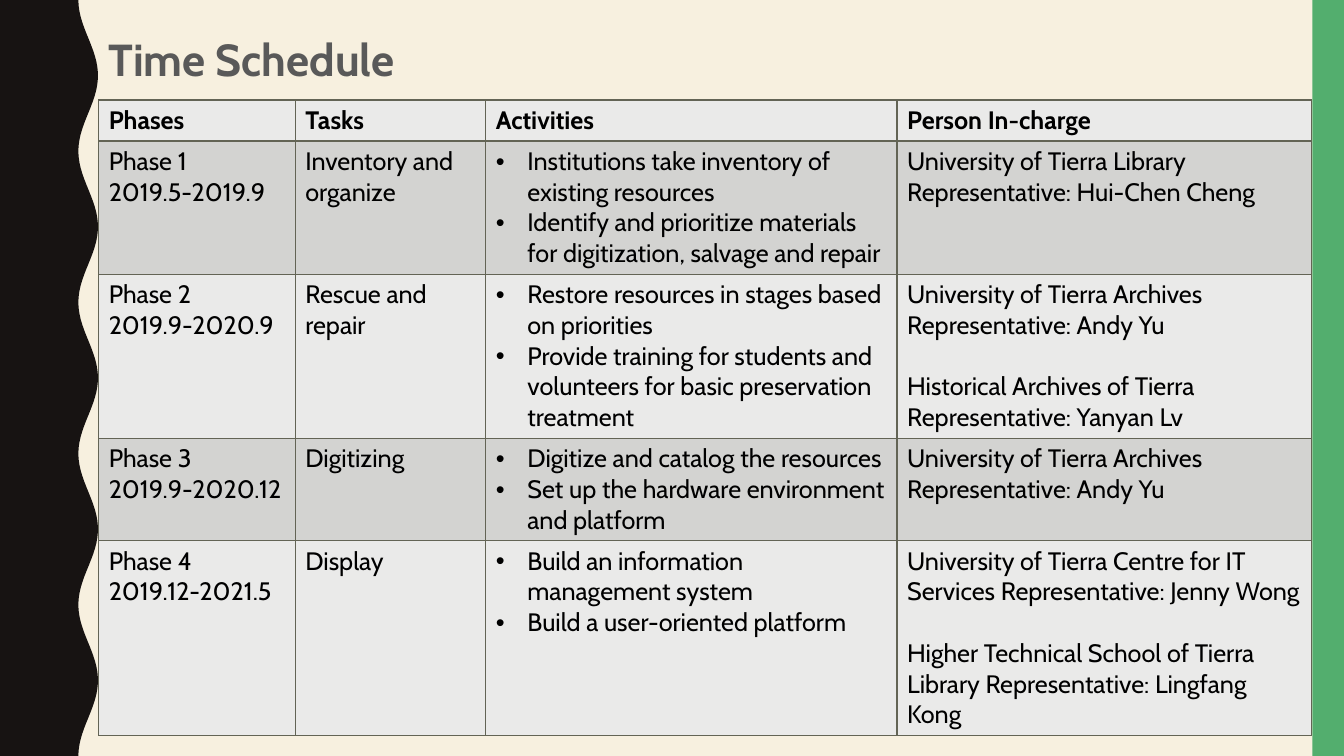
from dataclasses import dataclass
from math import cos, pi

from lxml.etree import SubElement
from pptx import Presentation
from pptx.dml.color import RGBColor
from pptx.enum.shapes import MSO_SHAPE
from pptx.enum.text import MSO_ANCHOR, PP_ALIGN
from pptx.oxml.ns import qn
from pptx.util import Pt


@dataclass(frozen=True)
class Theme:
    font: str = "Cabin"
    title_size: int = 32
    body_size: int = 18
    line_height: int = 22
    cell_padding: float = 7.2
    bullet_indent: float = 22.5
    border_width: int = 1
    background: str = "F7F0DF"
    wave: str = "171312"
    stripe: str = "53AE6E"
    title: str = "595959"
    text: str = "000000"
    border: str = "636455"
    bands: tuple = ("EAEAE9", "D3D3D1")


WIDTH, HEIGHT = 960, 540
COLUMN_WIDTHS = (140.4, 136.1, 293.8, 295.9)
ROW_LINES = (1, 4, 5, 3, 6)
ACTIVITIES_COLUMN, PERSON_COLUMN = 2, 3
SCHEDULE = (
    (["Phases"], ["Tasks"], ["Activities"], ["Person In-charge"]),
    (
        ["Phase 1", "2019.5-2019.9"],
        ["Inventory and organize"],
        ["Institutions take inventory of existing resources",
         "Identify and prioritize materials for digitization, salvage and repair"],
        ["University of Tierra Library Representative: Hui-Chen Cheng"],
    ),
    (
        ["Phase 2", "2019.9-2020.9"],
        ["Rescue and repair"],
        ["Restore resources in stages based on priorities",
         "Provide training for students and volunteers for basic preservation treatment"],
        ["University of Tierra Archives Representative: Andy Yu",
         "Historical Archives of Tierra Representative: Yanyan Lv"],
    ),
    (
        ["Phase 3", "2019.9-2020.12"],
        ["Digitizing"],
        ["Digitize and catalog the resources",
         "Set up the hardware environment and platform"],
        ["University of Tierra Archives Representative: Andy Yu"],
    ),
    (
        ["Phase 4", "2019.12-2021.5"],
        ["Display"],
        ["Build an information management system",
         "Build a user-oriented platform"],
        ["University of Tierra Centre for IT Services Representative: Jenny Wong",
         "Higher Technical School of Tierra Library Representative: Lingfang Kong"],
    ),
)


class SlideBuilder:
    """Draws themed elements on one slide, with lengths in points."""

    def __init__(self, slide, theme):
        self.slide = slide
        self.theme = theme

    def background(self):
        fill = self.slide.background.fill
        fill.solid()
        fill.fore_color.rgb = RGBColor.from_string(self.theme.background)

    def paint(self, shape, color):
        shape.shadow.inherit = False
        shape.fill.solid()
        shape.fill.fore_color.rgb = RGBColor.from_string(color)
        shape.line.fill.background()

    def wave(self, middle, amplitude, period, step):
        edge = [
            (Pt(middle - amplitude * cos(2 * pi * y / period)), Pt(y))
            for y in range(0, HEIGHT + step, step)
        ]
        builder = self.slide.shapes.build_freeform(0, 0)
        builder.add_line_segments(edge + [(0, Pt(HEIGHT))], close=True)
        self.paint(builder.convert_to_shape(), self.theme.wave)

    def stripe(self, left):
        shape = self.slide.shapes.add_shape(
            MSO_SHAPE.RECTANGLE, Pt(left), 0, Pt(WIDTH - left), Pt(HEIGHT))
        self.paint(shape, self.theme.stripe)

    def format_text(self, paragraph, size, color, bold):
        paragraph.alignment = PP_ALIGN.LEFT
        for run in paragraph.runs:
            run.font.name = self.theme.font
            run.font.size = Pt(size)
            run.font.bold = bold
            run.font.color.rgb = RGBColor.from_string(color)

    def title(self, text, left, top, width, height):
        box = self.slide.shapes.add_textbox(Pt(left), Pt(top), Pt(width), Pt(height))
        frame = box.text_frame
        frame.word_wrap = True
        frame.vertical_anchor = MSO_ANCHOR.TOP
        frame.text = text
        paragraph = frame.paragraphs[0]
        paragraph.line_spacing = 1.5
        paragraph.space_before = Pt(7)
        self.format_text(paragraph, self.theme.title_size, self.theme.title, True)

    def bullet(self, paragraph):
        properties = paragraph._p.get_or_add_pPr()
        indent = Pt(self.theme.bullet_indent)
        properties.set("marL", str(indent))
        properties.set("indent", str(-indent))
        SubElement(properties, qn("a:buFont"), typeface="Arial")
        SubElement(properties, qn("a:buChar"), char="•")

    def borders(self, cell):
        properties = cell._tc.get_or_add_tcPr()
        for side in ("L", "R", "T", "B"):
            line = SubElement(
                properties, qn(f"a:ln{side}"), w=str(Pt(self.theme.border_width)))
            fill = SubElement(line, qn("a:solidFill"))
            SubElement(fill, qn("a:srgbClr"), val=self.theme.border)

    def cell(self, cell, lines, row, column):
        self.borders(cell)
        cell.fill.solid()
        cell.fill.fore_color.rgb = RGBColor.from_string(self.theme.bands[row % 2])
        cell.text_frame.text = "\n".join(lines)
        for index, paragraph in enumerate(cell.text_frame.paragraphs):
            self.format_text(paragraph, self.theme.body_size, self.theme.text, row == 0)
            if index and column == PERSON_COLUMN:
                paragraph.space_before = Pt(self.theme.line_height)
            if row and column == ACTIVITIES_COLUMN:
                self.bullet(paragraph)

    def table(self, rows, left, top):
        heights = [
            self.theme.cell_padding + self.theme.line_height * lines
            for lines in ROW_LINES
        ]
        table = self.slide.shapes.add_table(
            len(rows), len(COLUMN_WIDTHS), Pt(left), Pt(top),
            Pt(sum(COLUMN_WIDTHS)), Pt(sum(heights))).table
        table.horz_banding = False
        for column, width in zip(table.columns, COLUMN_WIDTHS):
            column.width = Pt(width)
        for row, (cells, height) in enumerate(zip(rows, heights)):
            table.rows[row].height = Pt(height)
            for column, lines in enumerate(cells):
                self.cell(table.cell(row, column), lines, row, column)


def main():
    presentation = Presentation()
    presentation.slide_width = Pt(WIDTH)
    presentation.slide_height = Pt(HEIGHT)
    slide = presentation.slides.add_slide(presentation.slide_layouts[6])
    builder = SlideBuilder(slide, Theme())
    builder.background()
    builder.wave(middle=63, amplitude=7, period=108, step=4)
    builder.stripe(left=937.5)
    builder.title("Time Schedule", left=70.5, top=0, width=829.5, height=70)
    builder.table(SCHEDULE, left=70.5, top=71.5)
    presentation.save("out.pptx")


if __name__ == "__main__":
    main()
